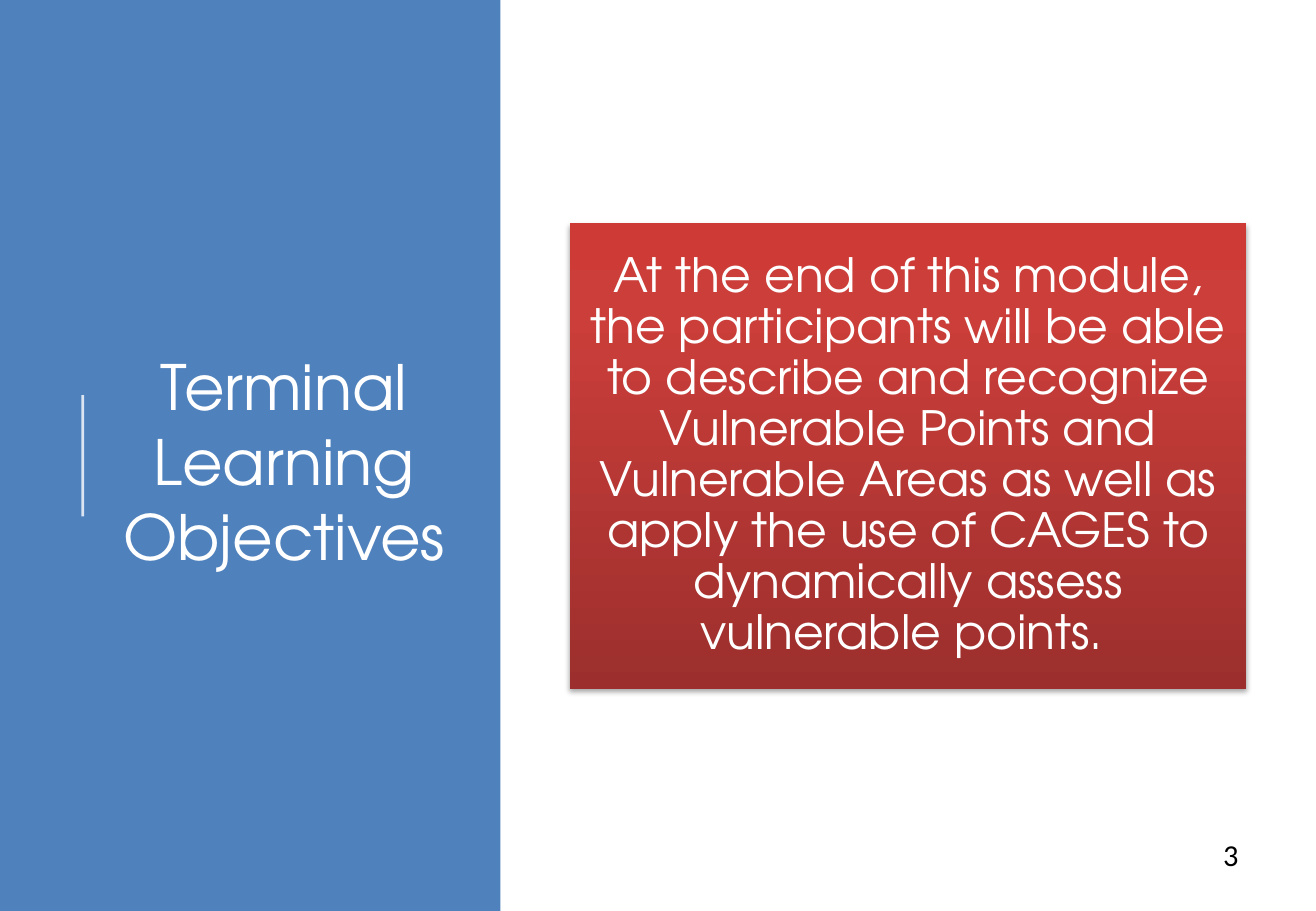
import pptx
import pptx.util
import pptx.dml.color
import pptx.enum.shapes
import pptx.enum.text
import pptx.oxml
import pptx.oxml.ns

Cm = pptx.util.Cm
Pt = pptx.util.Pt
ALIGN = pptx.enum.text.PP_ALIGN
ANCHOR = pptx.enum.text.MSO_ANCHOR
RECT = pptx.enum.shapes.MSO_SHAPE.RECTANGLE

COLORS = {
    "panel": "4F81BD",
    "white": "FFFFFF",
    "black": "000000",
    "red_dark": "9C2F2D",
    "red_mid": "CB3E3A",
    "red_light": "CE3B37",
}
HEADING_FONT = "TeX Gyre Adventor"
NUMBER_FONT = "Calibri"


def rgb(name):
    return pptx.dml.color.RGBColor.from_string(COLORS[name])


def add_xml(parent, body):
    tag, rest = body.split(" ", 1)
    ns = pptx.oxml.ns.nsdecls("a")
    parent.append(pptx.oxml.parse_xml(f"<a:{tag} {ns} {rest}"))


def write(sp, text, size, font, color, align, anchor, inset=0.25):
    tf = sp.text_frame
    tf.word_wrap = True
    tf.vertical_anchor = anchor
    tf.margin_left = tf.margin_right = Cm(inset)
    tf.margin_top = tf.margin_bottom = Cm(inset if inset > 0.25 else 0.13)
    p = tf.paragraphs[0]
    p.alignment = align
    r = p.add_run()
    r.text = text
    r.font.size = Pt(size)
    r.font.name = font
    r.font.color.rgb = rgb(color)
    return p


def title_panel(s, x, y, w, h):
    sp = s.shapes.add_shape(RECT, Cm(x), Cm(y), Cm(w), Cm(h))
    sp.shadow.inherit = False
    sp.fill.solid()
    sp.fill.fore_color.rgb = rgb("panel")
    sp.line.fill.background()

    rule_x = Cm(x + 1.73)
    rule = s.shapes.add_connector(
        pptx.enum.shapes.MSO_CONNECTOR.STRAIGHT,
        rule_x, Cm(y + 10.8), rule_x, Cm(y + 8.26))
    rule.line.width = Pt(1.5)
    rule.line.color.rgb = rgb("white")
    spPr = rule._element.spPr
    clr = spPr.find(".//" + pptx.oxml.ns.qn("a:srgbClr"))
    add_xml(clr, 'alpha val="80000"/>')
    add_xml(spPr, "effectLst />")

    title = s.shapes.add_textbox(Cm(x + 2.13), Cm(y + 1.98), Cm(7.62), Cm(15.29))
    write(title, "Terminal Learning Objectives", 37, HEADING_FONT, "white",
          ALIGN.CENTER, ANCHOR.MIDDLE)


def objective_card(s, x, y, w, h):
    sp = s.shapes.add_shape(RECT, Cm(x), Cm(y), Cm(w), Cm(h))
    sp.line.fill.background()
    sp.fill.gradient()
    sp.fill.gradient_angle = 90
    stops = sp._element.spPr.find(".//" + pptx.oxml.ns.qn("a:gsLst"))
    for gs in list(stops):
        stops.remove(gs)
    for pos, name in ((0, "red_dark"), (80, "red_mid"), (100, "red_light")):
        add_xml(stops, f'gs pos="{pos * 1000}"><a:srgbClr val="{COLORS[name]}"/></a:gs>')
    sp.shadow.inherit = False
    effects = sp._element.spPr.find(pptx.oxml.ns.qn("a:effectLst"))
    add_xml(effects,
            f'outerShdw blurRad="{Pt(3.1)}" dist="{Pt(1.8)}" dir="5400000" rotWithShape="0">'
            f'<a:srgbClr val="{COLORS["black"]}"><a:alpha val="35000"/></a:srgbClr>'
            '</a:outerShdw>')
    p = write(sp, "At the end of this module, the participants will be able to "
              "describe and recognize Vulnerable Points and Vulnerable Areas as well "
              "as apply the use of CAGES to dynamically assess vulnerable points. ",
              28, HEADING_FONT, "white", ALIGN.CENTER, ANCHOR.MIDDLE, 0.3)
    p.line_spacing = 0.9


def slide_number(s, x, y, w, h):
    sp = s.shapes.add_textbox(Cm(x), Cm(y), Cm(w), Cm(h))
    write(sp, "3", 18, NUMBER_FONT, "black", ALIGN.RIGHT, ANCHOR.TOP)


def main():
    prs = pptx.Presentation()
    prs.slide_width = Cm(27.51)
    prs.slide_height = Cm(19.05)
    s = prs.slides.add_slide(prs.slide_layouts[6])
    title_panel(s, 0, 0, 10.46, 19.05)
    objective_card(s, 11.92, 4.67, 14.13, 9.73)
    slide_number(s, 19.71, 17.35, 6.43, 1.02)
    prs.save("out.pptx")


if __name__ == "__main__":
    main()
